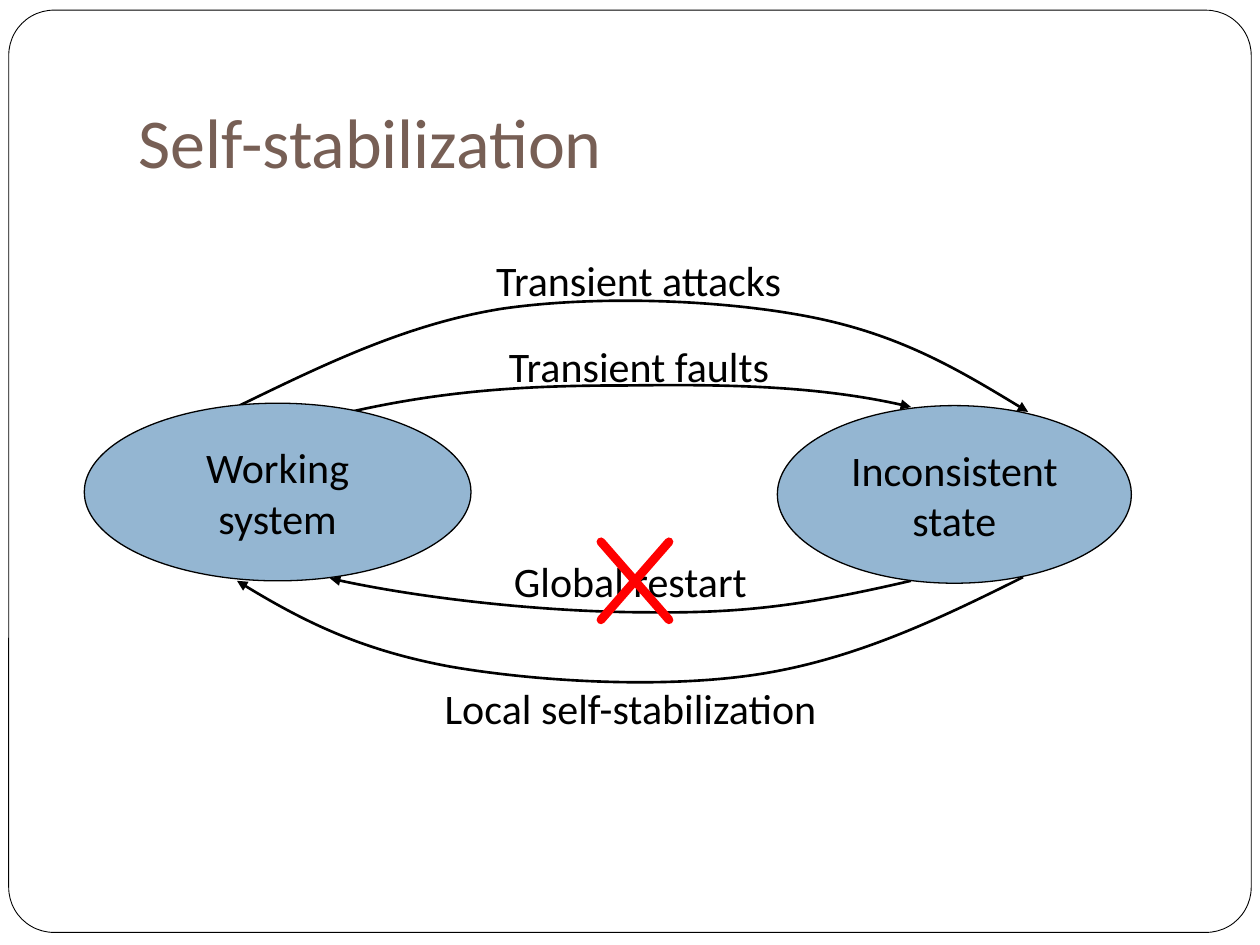
from dataclasses import dataclass

from lxml import etree
from pptx import Presentation
from pptx.dml.color import RGBColor
from pptx.enum.shapes import MSO_CONNECTOR, MSO_SHAPE
from pptx.enum.text import MSO_ANCHOR, MSO_AUTO_SIZE, PP_ALIGN
from pptx.oxml.ns import qn
from pptx.util import Pt

STRAIGHT = MSO_CONNECTOR.STRAIGHT
OVAL, ROUNDED = MSO_SHAPE.OVAL, MSO_SHAPE.ROUNDED_RECTANGLE
MIDDLE, BOTTOM = MSO_ANCHOR.MIDDLE, MSO_ANCHOR.BOTTOM
LEFT, CENTER = PP_ALIGN.LEFT, PP_ALIGN.CENTER
FIT_SHAPE, NO_FIT = MSO_AUTO_SIZE.SHAPE_TO_FIT_TEXT, MSO_AUTO_SIZE.NONE


@dataclass(frozen=True)
class Theme:
    font: str = "Calibri"
    title_size: int = 40
    text_size: int = 24
    title: RGBColor = RGBColor(0x77, 0x5F, 0x55)
    ink: RGBColor = RGBColor(0, 0, 0)
    paper: RGBColor = RGBColor(255, 255, 255)
    state: RGBColor = RGBColor(0x94, 0xB6, 0xD2)
    cross: RGBColor = RGBColor(255, 0, 0)


THEME = Theme()

# Boxes are left, top, width, height; inside the diagram they are relative to it.
FRAME_BOX = (5, 5.8, 710, 527)
TITLE_BOX = (72, 21.6, 612, 90)
DIAGRAM_BOX = (48, 140, 600, 260)
STATES = [
    ("Working system", (0.2, 90.4, 221, 101.5)),
    ("Inconsistent state", (396.2, 91.8, 202.3, 101.5)),
]
# Each transition: label, label box, Bezier points (start, then three per curve).
TRANSITIONS = [
    ("Transient faults", (235.7, 50.8, 165, 36),
     [(148.6, 96.2), (207.6, 82.5), (256.6, 80.3), (310.6, 80.3),
      (364.6, 79.6), (421.4, 80.3), (472.6, 92.6)]),
    ("Transient attacks", (228.5, 1.8, 185, 36),
     [(88.8, 91.8), (136.3, 68.8), (184.6, 45), (239.3, 36.4),
      (294, 28.5), (366.7, 31.4), (416.4, 41.4),
      (466.8, 51.5), (502.8, 73.1), (539.5, 95.4)]),
    ("Global restart", (238.6, 173.9, 149, 36),
     [(472.6, 191.9), (413.5, 205.6), (377.5, 210.6), (322.1, 209.9),
      (266.6, 209.9), (191, 202), (140.6, 190.5)]),
    ("Local self-stabilization", (199, 246.6, 230, 36),
     [(536.6, 189.8), (489.1, 213.5), (440.9, 236.6), (386.2, 245.2),
      (331.4, 253.8), (258.7, 249.5), (209, 240.9),
      (158.6, 231.5), (123.4, 214.2), (87.4, 191.9)]),
]
CROSS_BOX = (295.4, 169.6, 38.9, 44.6)


def points(values):
    return [Pt(value) for value in values]


def within(origin, box):
    """Shift a box by the corner of the region that holds it."""
    return (origin[0] + box[0], origin[1] + box[1], *box[2:])


def write(shape, text, size, color, alignment):
    paragraph = shape.text_frame.paragraphs[0]
    paragraph.alignment = alignment
    run = paragraph.add_run()
    run.text = text
    run.font.name = THEME.font
    run.font.size = Pt(size)
    run.font.color.rgb = color


def add_filled_shape(slide, kind, box, fill, line_width):
    shape = slide.shapes.add_shape(kind, *points(box))
    shape.shadow.inherit = False
    shape.fill.solid()
    shape.fill.fore_color.rgb = fill
    shape.line.color.rgb = THEME.ink
    shape.line.width = Pt(line_width)
    return shape


def add_frame(slide, box):
    frame = add_filled_shape(slide, ROUNDED, box, THEME.paper, 0.5)
    frame.adjustments[0] = 0.049
    slide.shapes._spTree.insert(2, frame._element)  # behind the title


def add_title(slide, box, text):
    title = slide.shapes.title
    title.left, title.top, title.width, title.height = points(box)
    text_frame = title.text_frame
    text_frame.auto_size = NO_FIT
    text_frame.vertical_anchor = BOTTOM
    text_frame.margin_bottom = Pt(7.2)
    write(title, text, THEME.title_size, THEME.title, LEFT)


def add_label(slide, box, text):
    label = slide.shapes.add_textbox(*points(box))
    label.text_frame.word_wrap = False
    label.text_frame.auto_size = FIT_SHAPE
    write(label, text, THEME.text_size, THEME.ink, LEFT)


def add_curved_arrow(slide, origin, bezier):
    start, *rest = [points(within(origin, point)) for point in bezier]
    builder = slide.shapes.build_freeform(*start)
    builder.add_line_segments(rest, close=False)
    arrow = builder.convert_to_shape()
    # Turn every three straight segments into one cubic curve.
    segments = list(arrow._element.iter(qn("a:lnTo")))
    outline = segments[0].getparent()
    for first in range(0, len(segments), 3):
        curve = etree.SubElement(outline, qn("a:cubicBezTo"))
        for segment in segments[first:first + 3]:
            curve.append(segment[0])
            outline.remove(segment)
    arrow.shadow.inherit = False
    arrow.fill.background()
    arrow.line.color.rgb = THEME.ink
    arrow.line.width = Pt(1.5)
    etree.SubElement(arrow.line._get_or_add_ln(), qn("a:tailEnd"), type="triangle")


def add_cross(slide, box):
    left, top, width, height = box
    right, bottom = left + width, top + height
    for ends in ((left, top, right, bottom), (left, bottom, right, top)):
        stroke = slide.shapes.add_connector(STRAIGHT, *points(ends))
        stroke.line.color.rgb = THEME.cross
        stroke.line.width = Pt(5)
        stroke.line._get_or_add_ln().set("cap", "rnd")
        etree.SubElement(stroke._element.spPr, qn("a:effectLst"))


def add_state(slide, box, text):
    state = add_filled_shape(slide, OVAL, box, THEME.state, 0.75)
    state.text_frame.word_wrap = True
    state.text_frame.vertical_anchor = MIDDLE
    write(state, text, THEME.text_size, THEME.ink, CENTER)


def add_state_diagram(slide, box):
    origin = box[:2]
    for text, label_box, bezier in TRANSITIONS:
        add_curved_arrow(slide, origin, bezier)
        add_label(slide, within(origin, label_box), text)
    add_cross(slide, within(origin, CROSS_BOX))
    for text, state_box in STATES:
        add_state(slide, within(origin, state_box), text)


def main():
    presentation = Presentation()
    presentation.slide_width, presentation.slide_height = Pt(720), Pt(540)
    slide = presentation.slides.add_slide(presentation.slide_layouts[5])
    add_frame(slide, FRAME_BOX)
    add_title(slide, TITLE_BOX, "Self-stabilization")
    add_state_diagram(slide, DIAGRAM_BOX)
    presentation.save("out.pptx")


if __name__ == "__main__":
    main()
